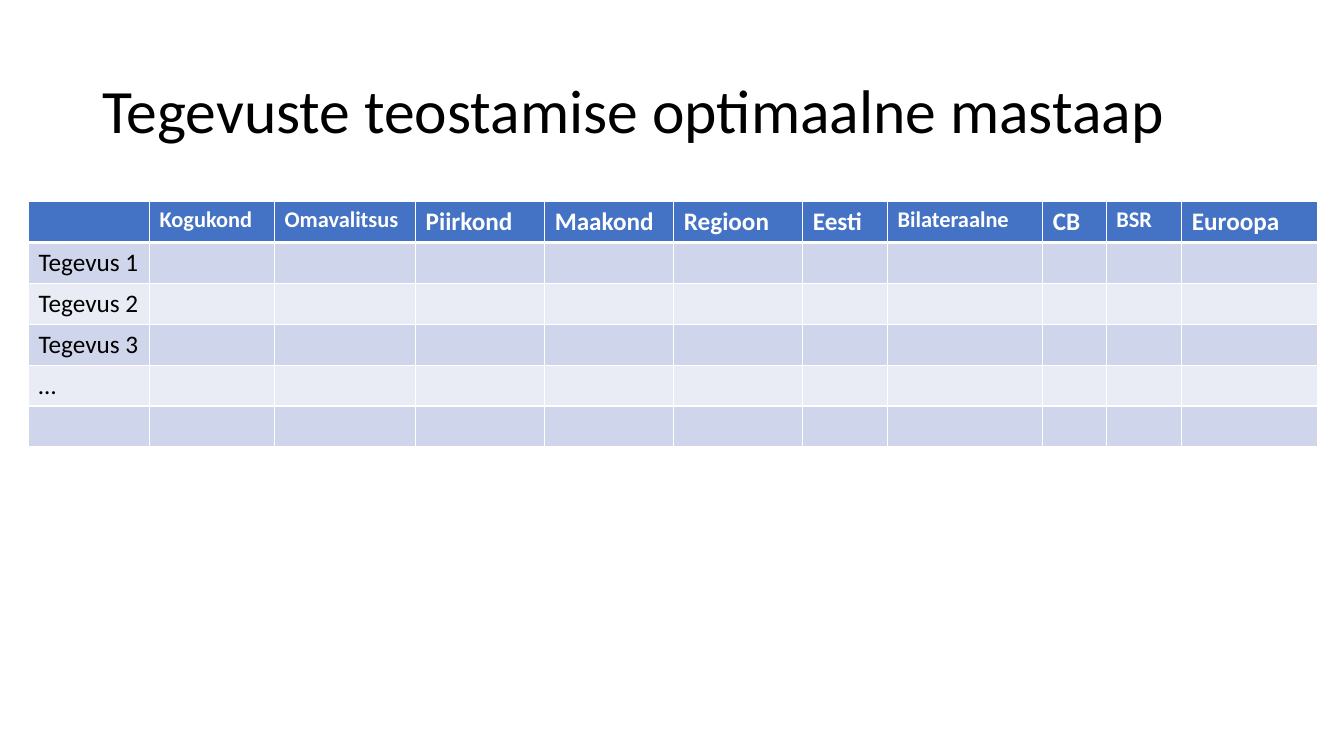
from lxml.etree import SubElement
from pptx import Presentation
from pptx.dml.color import RGBColor
from pptx.enum.text import MSO_ANCHOR
from pptx.oxml.ns import qn
from pptx.util import Pt

FONT = "Calibri"
COLORS = {
    "head": "4472C4",
    "odd": "CFD5EA",
    "even": "E9EBF5",
    "white": "FFFFFF",
    "black": "000000",
}

# Heading, column width, text size
SCALES = [
    ("", 86.4, 18),
    ("Kogukond", 89.3, 16),
    ("Omavalitsus", 100.8, 16),
    ("Piirkond", 92.2, 18),
    ("Maakond", 92.2, 18),
    ("Regioon", 92.2, 18),
    ("Eesti", 60.5, 18),
    ("Bilateraalne", 110.9, 16),
    ("CB", 45.4, 18),
    ("BSR", 54, 16),
    ("Euroopa", 97.2, 18),
]
TASKS = ["Tegevus 1", "Tegevus 2", "Tegevus 3", "…", ""]
ROW = 29.2


def color(name):
    return RGBColor.from_string(COLORS[name])


def write(frame, text, size, ink, bold=False):
    frame.text = text
    para = frame.paragraphs[0]
    for font in [para.font] + [run.font for run in para.runs]:
        font.name = FONT
        font.size = Pt(size)
        font.bold = bold
        font.color.rgb = color(ink)


def add_title(slide, text):
    box = slide.shapes.add_textbox(Pt(66), Pt(28.75), Pt(828), Pt(104.4))
    frame = box.text_frame
    frame.word_wrap = True
    frame.vertical_anchor = MSO_ANCHOR.MIDDLE
    write(frame, text, 44, "black")
    frame.paragraphs[0].line_spacing = 0.9


def add_edges(cell, top, base):
    """Draw white cell borders, with the given top and bottom widths."""
    props = cell._tc.get_or_add_tcPr()
    for side, width in (("L", 1), ("R", 1), ("T", top), ("B", base)):
        line = SubElement(props, qn(f"a:ln{side}"), w=str(Pt(width)))
        fill = SubElement(line, qn("a:solidFill"))
        SubElement(fill, qn("a:srgbClr"), val=COLORS["white"])


def style(cell, fill, top=1, base=1):
    add_edges(cell, top, base)
    cell.fill.solid()
    cell.fill.fore_color.rgb = color(fill)


def add_grid(slide):
    rows, cols = len(TASKS) + 1, len(SCALES)
    total = sum(width for _, width, _ in SCALES)
    shape = slide.shapes.add_table(
        rows, cols, Pt(20.4), Pt(144), Pt(total), Pt(ROW * rows))
    table = shape.table
    for row in table.rows:
        row.height = Pt(ROW)
    for col, (name, width, size) in enumerate(SCALES):
        table.columns[col].width = Pt(width)
        head = table.cell(0, col)
        write(head.text_frame, name, size, "white", True)
        style(head, "head", base=3)
        for row, task in enumerate(TASKS, 1):
            cell = table.cell(row, col)
            write(cell.text_frame, "" if col else task, 18, "black")
            style(cell, "odd" if row % 2 else "even", top=3 if row == 1 else 1)


def main():
    deck = Presentation()
    deck.slide_width, deck.slide_height = Pt(960), Pt(540)
    slide = deck.slides.add_slide(deck.slide_layouts[6])
    add_title(slide, "Tegevuste teostamise optimaalne mastaap")
    add_grid(slide)
    deck.save("out.pptx")


if __name__ == "__main__":
    main()
